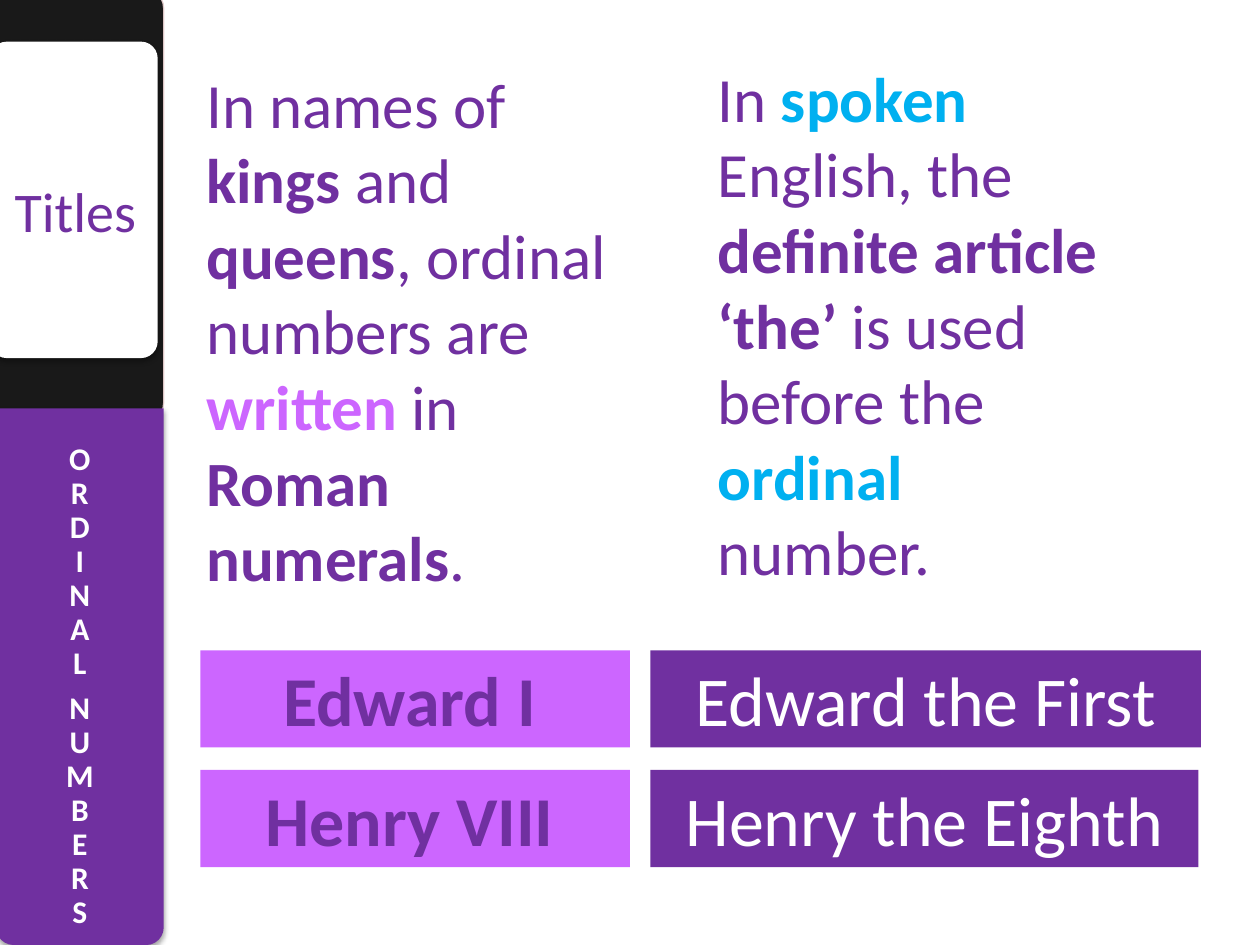
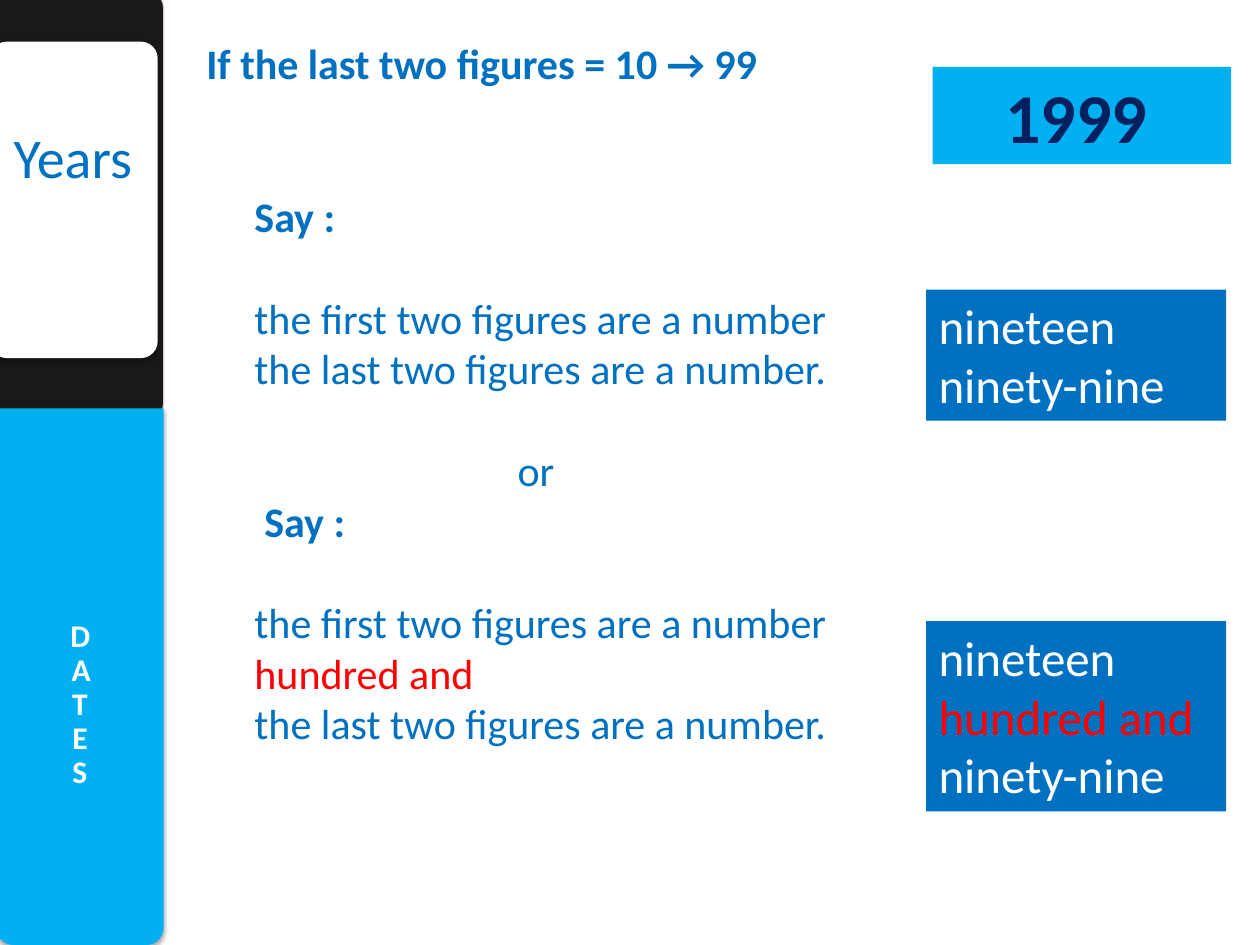
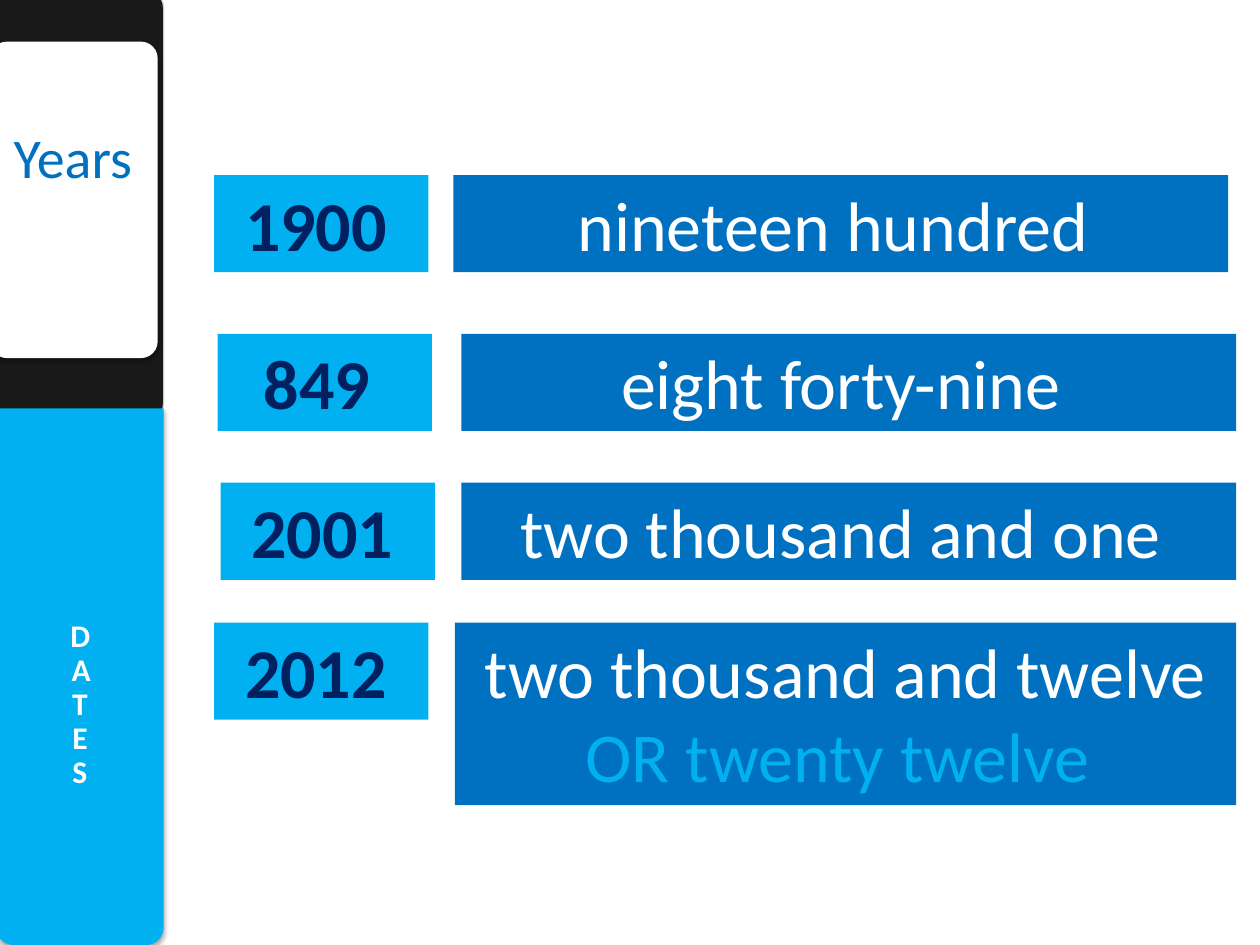
from lxml import etree
from pptx import Presentation
from pptx.dml.color import RGBColor
from pptx.enum.shapes import MSO_SHAPE
from pptx.enum.text import MSO_ANCHOR, MSO_AUTO_SIZE, PP_ALIGN
from pptx.oxml.ns import qn
from pptx.util import Cm, Pt

CENTER, LEFT = PP_ALIGN.CENTER, PP_ALIGN.LEFT
MIDDLE, TOP = MSO_ANCHOR.MIDDLE, MSO_ANCHOR.TOP
GROW, FIXED = MSO_AUTO_SIZE.SHAPE_TO_FIT_TEXT, MSO_AUTO_SIZE.NONE
ROUNDED, TAB = MSO_SHAPE.ROUNDED_RECTANGLE, MSO_SHAPE.ROUND_2_SAME_RECTANGLE

BLACK = RGBColor(0x00, 0x00, 0x00)
WHITE = RGBColor(0xFF, 0xFF, 0xFF)
EDGE = RGBColor(0xE8, 0xD0, 0xD0)
PURPLE = RGBColor(0x70, 0x30, 0xA0)
LILAC = RGBColor(0xCC, 0x66, 0xFF)
SKY = RGBColor(0x00, 0xB0, 0xF0)
BLUE = RGBColor(0x00, 0x70, 0xC0)
NAVY = RGBColor(0x00, 0x20, 0x60)
RED = RGBColor(0xFF, 0x00, 0x00)

BOLD = {"bold": True}
BAR_HEIGHT = 1.96
LINE_24 = Pt(29.3)
TAB_BOX = (-0.08, 8.23, 3.38, 10.82)
SMALL_SPACE = (" ", {"size": Pt(28)})


def cm(box):
    return [Cm(length) for length in box]


def apply(target, values):
    for name, value in values.items():
        setattr(target, name, value)


class Lesson:
    font = "Calibri"

    def __init__(self):
        self.deck = Presentation()
        apply(self.deck, {"slide_width": Cm(25.4), "slide_height": Cm(19.05)})
        self.slide = None

    def panel(self, kind, box, color, corners, rotation=0):
        panel = self.slide.shapes.add_shape(kind, *cm(box))
        panel.rotation = rotation
        panel.shadow.inherit = False
        panel.fill.solid()
        panel.fill.fore_color.rgb = color
        panel.line.fill.background()
        for index, corner in enumerate(corners):
            panel.adjustments[index] = corner
        return panel

    def fade(self, panel, percent):
        for color in panel.element.spPr.iter(qn("a:srgbClr")):
            etree.SubElement(color, qn("a:alpha"), val=str(percent * 1000))

    def drop_shadow(self, panel):
        effects = panel.element.spPr.find(qn("a:effectLst"))
        shadow = etree.SubElement(effects, qn("a:outerShdw"), blurRad=str(Pt(3.1)),
                                  dist=str(Pt(1.8)), dir="5400000", rotWithShape="0")
        color = etree.SubElement(shadow, qn("a:srgbClr"), val=str(BLACK))
        etree.SubElement(color, qn("a:alpha"), val="35000")

    def text(self, box, paragraphs, size, color, fill=None, align=LEFT, bold=False, layout=None, **frame_format):
        area = self.slide.shapes.add_textbox(*cm(box))
        if fill is not None:
            area.fill.solid()
            area.fill.fore_color.rgb = fill
        frame = area.text_frame
        apply(frame, {"word_wrap": True, "auto_size": GROW, "vertical_anchor": TOP, **frame_format})
        for index, runs in enumerate(paragraphs):
            paragraph = frame.add_paragraph() if index else frame.paragraphs[0]
            paragraph.alignment = align
            apply(paragraph, layout or {})
            for run in [runs] if isinstance(runs, str) else runs:
                words, changes = (run, {}) if isinstance(run, str) else run
                part = paragraph.add_run()
                part.text = words
                style = {"name": self.font, "size": Pt(size), "bold": bold, "color": color, **changes}
                part.font.color.rgb = style.pop("color")
                apply(part.font, style)
        return frame

    def bar(self, box, runs, color, fill, bold=False):
        self.text(box, [runs], 40, color, fill, CENTER, bold)

    def topic(self, title, title_box, title_color, section, band, section_inset):
        self.slide = self.deck.slides.add_slide(self.deck.slide_layouts[6])
        backing = self.panel(ROUNDED, (-0.3, -0.2, 3.6, 8.69), BLACK, [0.1])
        backing.line.color.rgb = EDGE
        backing.line.width = Pt(0.75)
        self.fade(backing, 90)
        self.drop_shadow(self.panel(ROUNDED, (-0.2, 0.84, 3.38, 6.38), WHITE, [0.1]))
        self.drop_shadow(self.panel(TAB, TAB_BOX, band, [0.105, 0], 180))
        top, bottom = cm(section_inset)
        frame = self.text(TAB_BOX, section, 18, WHITE, align=CENTER, bold=True,
                          layout={"line_spacing": 0.9, "space_after": Pt(6.3)},
                          auto_size=FIXED, vertical_anchor=MIDDLE, margin_left=Cm(0.2),
                          margin_right=Cm(0.2), margin_top=top, margin_bottom=bottom)
        frame._txBody.bodyPr.set("vert", "wordArtVert")
        self.text(title_box, [title], 32, title_color, WHITE, CENTER)

    def years_topic(self):
        self.topic("Years", (-0.08, 2.34, 3.1, 1.63), BLUE, ["DATES"], SKY, (1.4, 0.23))

    def year(self, box, runs):
        self.bar(box, runs, NAVY, SKY, True)


def build_titles(lesson):
    lesson.topic("Titles", (-0.03, 3.43, 3.1, 1.63), PURPLE,
                 ["ORDINAL", "NUMBERS"], PURPLE, (0.76, 0.36))
    written = ["In names of ", ("kings", BOLD), " and ", ("queens", BOLD), ", ordinal numbers are ",
               ("written ", {"color": LILAC, **BOLD}), "in ", ("Roman numerals", BOLD), "."]
    spoken_accent = {"color": SKY, **BOLD}
    spoken = ["In ", ("spoken ", spoken_accent), "English, the ", ("definite article ‘the’ ", BOLD),
              "is used before the ", ("ordinal ", spoken_accent), "number."]
    lesson.text((3.91, 1.19, 8.79, 12.57), [written], 36, PURPLE)
    lesson.text((14.22, 1.07, 8.79, 11.02), [spoken], 36, PURPLE)
    monarchs = [("Edward I", "Edward the First", 11.1), ("Henry VIII", "Henry the Eighth", 11.05)]
    for row, (numeral, ordinal, width) in enumerate(monarchs):
        top = 13.11 + row * 2.41
        lesson.bar((4.04, top, 8.66, BAR_HEIGHT), [numeral, SMALL_SPACE], PURPLE, LILAC, True)
        lesson.bar((13.11, top, width, BAR_HEIGHT), [ordinal], WHITE, PURPLE)


def build_year_rule(lesson):
    lesson.years_topic()
    first, last = "the first two figures are a number", "the last two figures are a number."
    hundred = [("hundred and", {"color": RED})]
    rule = [
        ([("If the last two figures = 10 → 99", BOLD)], 0, 0),
        ([("Say :", BOLD)], 0.97, 2),
        (first, 0.97, 1),
        (last, 0.97, 0),
        ("or", 0, 1),
        ([("Say :", BOLD)], 1.17, 0),
        (first, 0.97, 1),
        (hundred, 0.97, 0),
        (last, 0.97, 0),
    ]
    frame = lesson.text((3.91, 0.64, 13.79, 16.66), [runs for runs, _, _ in rule], 24, BLUE)
    for paragraph, (runs, indent, gap) in zip(frame.paragraphs, rule):
        paragraph.space_before = gap * LINE_24
        paragraph.alignment = CENTER if runs == "or" else LEFT
        paragraph._p.get_or_add_pPr().set("marL", str(Cm(indent)))
    lesson.year((18.8, 1.35, 6.02, BAR_HEIGHT), ["1999", SMALL_SPACE])
    lesson.text((18.67, 5.84, 6.05, 2.64), ["nineteen", "ninety-nine"], 28, WHITE, BLUE)
    lesson.text((18.67, 12.52, 6.05, 3.84), ["nineteen", hundred, "ninety-nine"], 28, WHITE, BLUE)


def build_year_examples(lesson):
    lesson.years_topic()
    examples = [
        (3.53, 4.32, ["1900", SMALL_SPACE], (9.14, 15.62, BAR_HEIGHT), ["nineteen hundred "]),
        (6.73, 4.39, ["849 "], (9.3, 15.62, BAR_HEIGHT), ["eight forty-nine "]),
        (9.73, 4.45, ["2001", SMALL_SPACE], (9.3, 15.62, BAR_HEIGHT), ["two thousand and one "]),
        (12.55, 4.32, ["2012", SMALL_SPACE], (9.17, 15.75, 3.68),
         ["two thousand and twelve ", ("OR twenty twelve ", {"color": SKY})]),
    ]
    for top, year_left, figures, (left, width, height), words in examples:
        lesson.year((year_left, top, 4.32, BAR_HEIGHT), figures)
        lesson.bar((left, top, width, height), words, WHITE, BLUE)


def main():
    lesson = Lesson()
    build_titles(lesson)
    build_year_rule(lesson)
    build_year_examples(lesson)
    lesson.deck.save("out.pptx")


if __name__ == "__main__":
    main()
